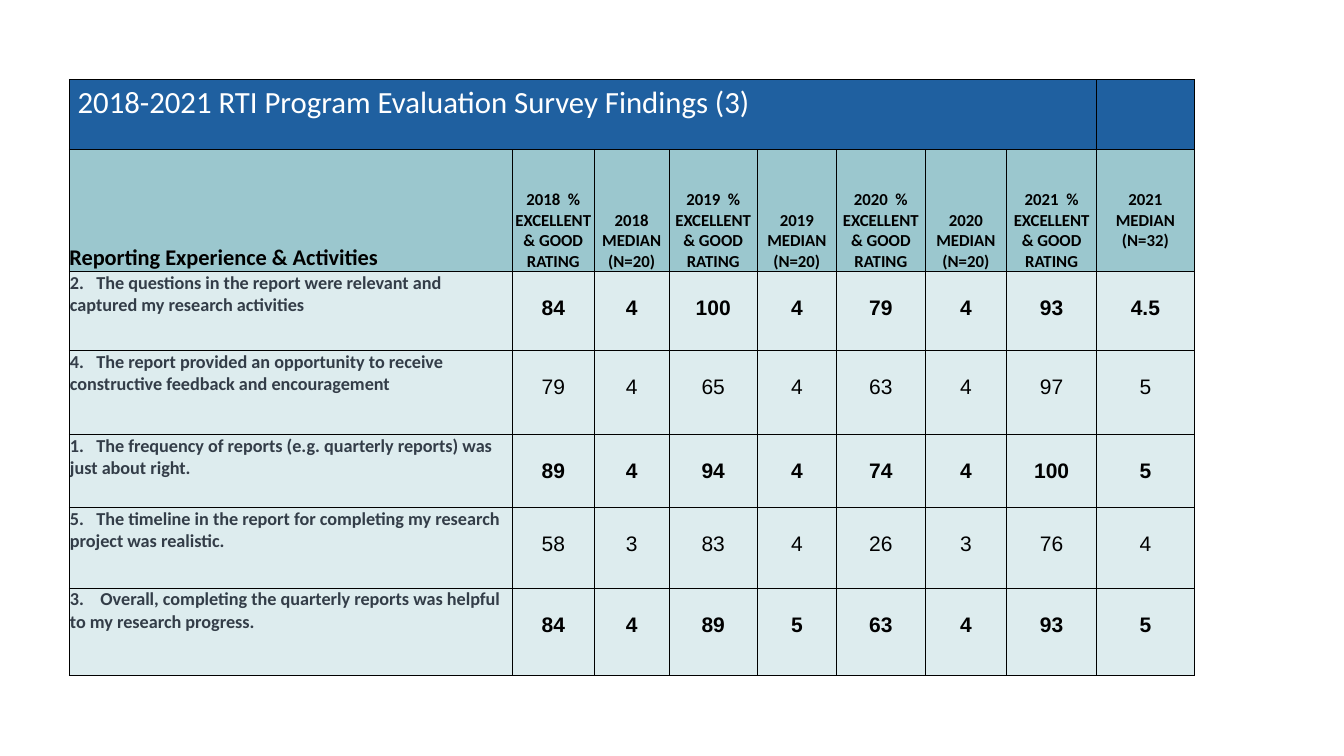
from dataclasses import dataclass

from lxml import etree
from pptx import Presentation
from pptx import util as u
from pptx.dml.color import RGBColor
from pptx.enum import text
from pptx.oxml.ns import qn


@dataclass(frozen=True)
class Theme:
    title_fill: str = "1F60A0"
    head_fill: str = "9BC7CE"
    body_fill: str = "DDECEE"
    white: str = "FFFFFF"
    black: str = "000000"
    label: str = "333D48"
    font: str = "Calibri"
    number_font: str = "Arial"
    title_size: int = 22
    section_size: int = 16
    number_size: int = 15
    label_size: int = 13
    head_size: int = 12
    border: float = 0.5


class Slide:
    def __init__(self, prs, theme):
        self.t = theme
        self.s = prs.slides.add_slide(prs.slide_layouts[6])

    def table(self, left, top, widths, heights):
        frame = self.s.shapes.add_table(
            len(heights), len(widths), u.Pt(left), u.Pt(top),
            u.Pt(sum(widths)), u.Pt(sum(heights)))
        tbl = frame.table
        tbl.first_row = tbl.horz_banding = False
        for col, width in zip(tbl.columns, widths):
            col.width = u.Pt(width)
        for row, height in zip(tbl.rows, heights):
            row.height = u.Pt(height)
        return tbl

    def borders(self, cell):
        tcPr = cell._tc.get_or_add_tcPr()
        for i, side in enumerate(("lnL", "lnR", "lnT", "lnB")):
            ln = etree.Element(qn(f"a:{side}"), w=str(u.Pt(self.t.border)))
            fill = etree.SubElement(ln, qn("a:solidFill"))
            etree.SubElement(fill, qn("a:srgbClr"), val=self.t.black)
            tcPr.insert(i, ln)

    def cell(self, cell, fill, words="", size=12, color="000000", bold=False,
             font=None, center=False, bottom=False, margins=(0, 0, 0, 0)):
        """Margins run left, top, right, bottom."""
        cell.fill.solid()
        cell.fill.fore_color.rgb = RGBColor.from_string(fill)
        self.borders(cell)
        (cell.margin_left, cell.margin_top,
         cell.margin_right, cell.margin_bottom) = map(u.Pt, margins)
        anchor = text.MSO_ANCHOR
        cell.vertical_anchor = anchor.BOTTOM if bottom else anchor.TOP
        p = cell.text_frame.paragraphs[0]
        p.text = words
        p.alignment = text.PP_ALIGN.CENTER if center else text.PP_ALIGN.LEFT
        f = p.font
        f.name, f.size, f.bold = font or self.t.font, u.Pt(size), bold
        f.color.rgb = RGBColor.from_string(color)


COLUMN_WIDTHS = [316.5, 58.5, 53.5, 63, 56.5, 63.5, 58, 64.5, 69.5]
ROW_HEIGHTS = [50, 87, 56.5, 60, 52, 57.5, 62.5]
SAMPLES = {2018: 20, 2019: 20, 2020: 20, 2021: 32}
FINDINGS = [
    ("2.   The questions in the report were relevant and captured my research activities",
     [84, 4, 100, 4, 79, 4, 93, 4.5]),
    ("4.   The report provided an opportunity to receive constructive feedback and encouragement",
     [79, 4, 65, 4, 63, 4, 97, 5]),
    ("1.   The frequency of reports (e.g. quarterly reports) was just about right.",
     [89, 4, 94, 4, 74, 4, 100, 5]),
    ("5.   The timeline in the report for completing my research project was realistic.",
     [58, 3, 83, 4, 26, 3, 76, 4]),
    ("3.    Overall, completing the quarterly reports was helpful to my research progress.",
     [84, 4, 89, 5, 63, 4, 93, 5]),
]


def main():
    prs = Presentation()
    prs.slide_width, prs.slide_height = u.Pt(960), u.Pt(540)
    t = Theme()
    slide = Slide(prs, t)
    tbl = slide.table(49.5, 57, COLUMN_WIDTHS, ROW_HEIGHTS)
    last = len(COLUMN_WIDTHS) - 1

    # Title row
    for c in range(last + 1):
        words = "2018-2021 RTI Program Evaluation Survey Findings (3)" if c == 0 else ""
        slide.cell(tbl.cell(0, c), t.title_fill, words, t.title_size, t.white,
                   margins=(6, 3, 6, 3))
    tbl.cell(0, 0).merge(tbl.cell(0, last - 1))

    # Column headings
    slide.cell(tbl.cell(1, 0), t.head_fill, "Reporting Experience & Activities",
               t.section_size, t.black, bold=True, bottom=True)
    headings = [words for year, n in SAMPLES.items() for words in
                (f"{year}  % EXCELLENT & GOOD RATING", f"{year} MEDIAN (N={n})")]
    for c, words in enumerate(headings, 1):
        # The last heading sits one line higher and wraps after the year
        margins = (4, 0, 4, 14.5) if c == last else (0, 0, 0, 0)
        slide.cell(tbl.cell(1, c), t.head_fill, words, t.head_size, t.black,
                   bold=True, center=True, bottom=True, margins=margins)

    # Findings, with the figures bold in every other row
    for r, (label, values) in enumerate(FINDINGS, 2):
        slide.cell(tbl.cell(r, 0), t.body_fill, label, t.label_size, t.label,
                   bold=True, margins=(0.5, 0.5, 0.5, 0))
        for c, value in enumerate(values, 1):
            slide.cell(tbl.cell(r, c), t.body_fill, str(value), t.number_size,
                       t.black, bold=r % 2 == 0, font=t.number_font,
                       center=True, margins=(0.5, 18, 0.5, 0))

    prs.save("out.pptx")


if __name__ == "__main__":
    main()
